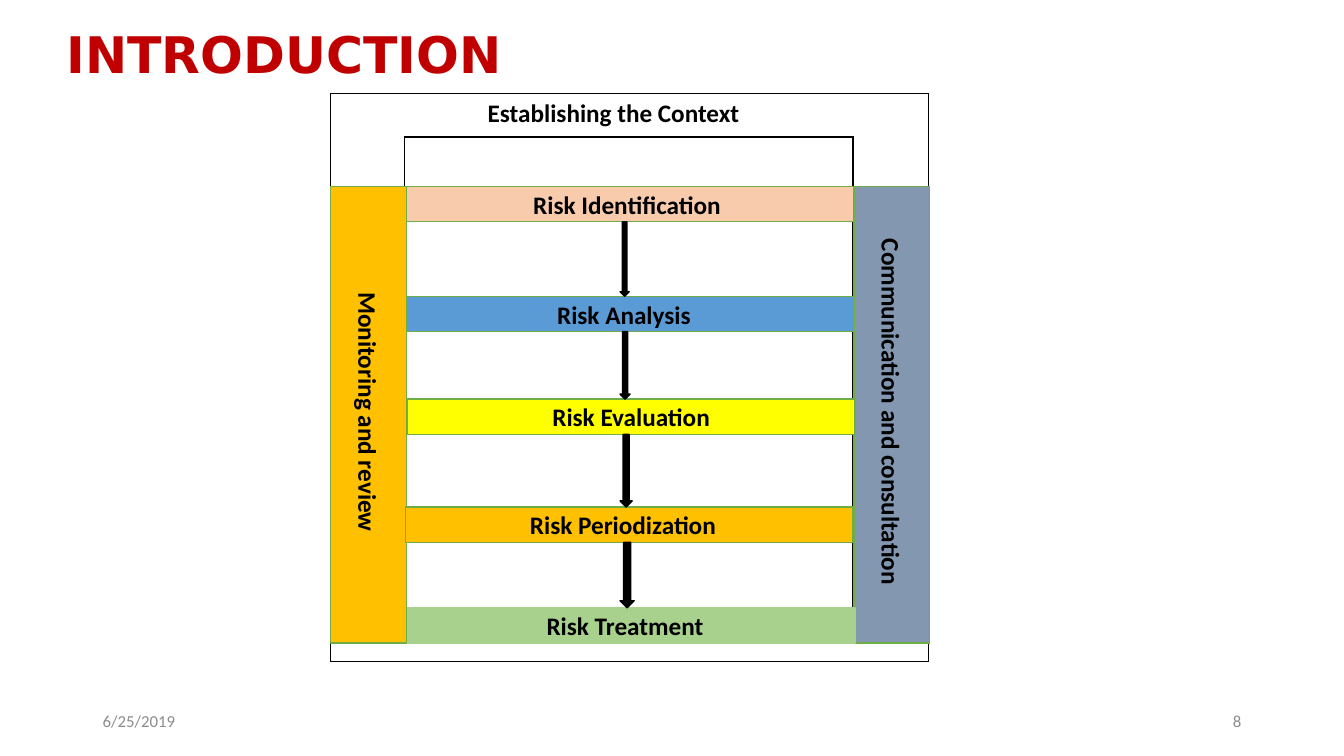
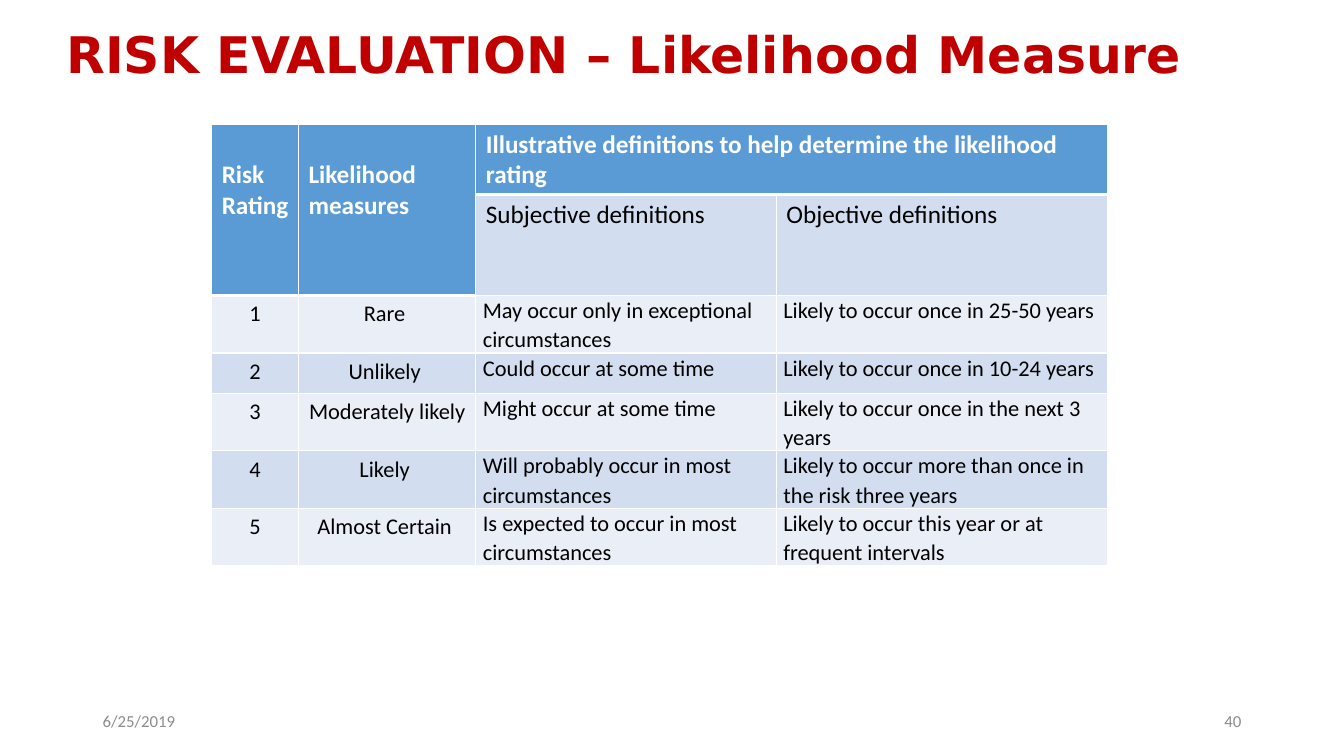
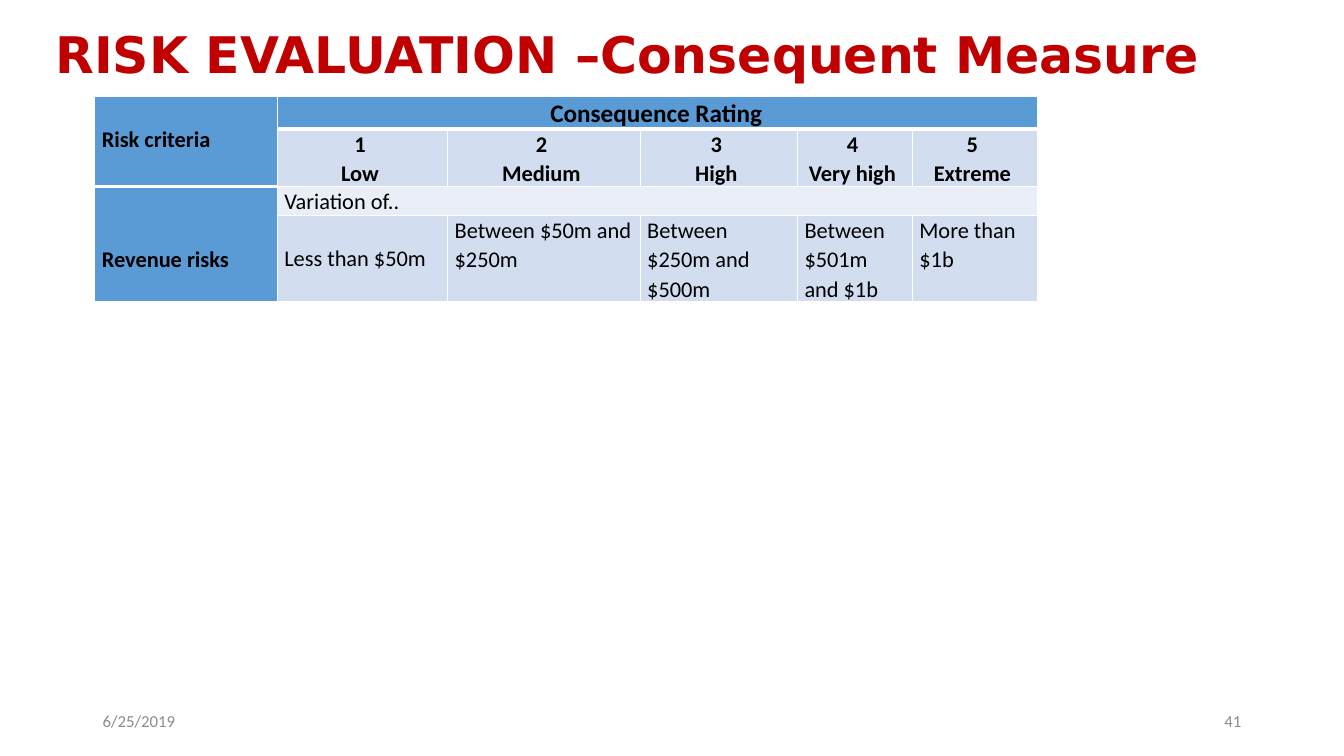
import pptx
import pptx.util
import pptx.dml.color
import pptx.enum.shapes
import pptx.enum.text
import pptx.oxml.ns
import lxml.etree

Inches = pptx.util.Inches
Pt = pptx.util.Pt
colour = pptx.dml.color.RGBColor.from_string
qn = pptx.oxml.ns.qn
Kind = pptx.enum.shapes.MSO_SHAPE
LEFT = pptx.enum.text.PP_ALIGN.LEFT
CENTER = pptx.enum.text.PP_ALIGN.CENTER
RIGHT = pptx.enum.text.PP_ALIGN.RIGHT
MIDDLE = pptx.enum.text.MSO_ANCHOR.MIDDLE
TOP = pptx.enum.text.MSO_ANCHOR.TOP

RED, BLACK, WHITE, GREY = "C00000", "000000", "FFFFFF", "8C8C8C"
BLUE, BAND, PALE, GREEN, AMBER = "5B9BD5", "D2DEEF", "EAEFF7", "70AD47", "FFC000"
ROOMY = (0.1, 0.05, 0.1, 0.05)
TIGHT = (0.07, 0, 0.07, 0)

styles = {
    "title": ("DejaVu Sans", 36, True, RED, LEFT, 1.0, ROOMY),
    "date": ("Calibri", 12, False, GREY, LEFT, 1.0, ROOMY),
    "number": ("Calibri", 12, False, GREY, RIGHT, 1.0, ROOMY),
    "step": ("Calibri", 18, True, BLACK, CENTER, 1.0, ROOMY),
    "context": ("Calibri", 18, True, BLACK, CENTER, 1.0, (0.1, 0.05, 0.42, 0.05)),
    "head": ("Calibri", 18, True, WHITE, LEFT, 1.0, (0.1, 0.05, 0.05, 0.05)),
    "subhead": ("Calibri", 18, False, BLACK, LEFT, 1.0, ROOMY),
    "rating": ("Calibri", 16, False, BLACK, CENTER, 1.0, ROOMY),
    "body": ("Calibri", 16, False, BLACK, LEFT, 1.07, TIGHT),
    "criteria": ("Calibri", 16, True, BLACK, LEFT, 1.07, TIGHT),
    "level": ("Calibri", 16, True, BLACK, CENTER, 1.07, (0.07, 0, 0.12, 0)),
    "banner": ("Calibri", 18, True, BLACK, CENTER, 1.07, (0.07, 0, 0.09, 0)),
}


def write(frame, owner, text, style, drop=0, nudge=0):
    name, size, bold, ink, align, spacing, (left, top, right, bottom) = styles[style]
    margins = {"margin_left": left, "margin_top": top + drop,
               "margin_right": right + nudge, "margin_bottom": bottom}
    for key, value in margins.items():
        setattr(owner, key, Inches(value))
    frame.word_wrap = True
    for index, line in enumerate(text.split("\n")):
        para = frame.add_paragraph() if index else frame.paragraphs[0]
        for key, value in {"alignment": align, "line_spacing": spacing}.items():
            setattr(para, key, value)
        span = para.add_run()
        span.text = line
        for key, value in {"name": name, "size": Pt(size), "bold": bold}.items():
            setattr(span.font, key, value)
        span.font.color.rgb = colour(ink)


def add_grid(page, left, top, widths, heights, edge, cells):
    table = page.shapes.add_table(len(heights), len(widths), Inches(left), Inches(top),
                                  Inches(sum(widths)), Inches(sum(heights))).table
    table.first_row = table.horz_banding = False
    for column, width in zip(table.columns, widths):
        column.width = Inches(width)
    for row, height in zip(table.rows, heights):
        row.height = Inches(height)
    for row, col, down, across, text, style, fill, drop in cells:
        for r in range(row, row + down):
            for c in range(col, col + across):
                cell = table.cell(r, c)
                properties = cell._tc.get_or_add_tcPr()
                for side in "LRTB":
                    weight = 3 if side == "B" and row == 0 and fill else 1
                    line = lxml.etree.SubElement(properties, qn("a:ln" + side), w=str(Pt(weight)))
                    solid = lxml.etree.SubElement(line, qn("a:solidFill"))
                    lxml.etree.SubElement(solid, qn("a:srgbClr"), val=edge)
                if fill:
                    cell.fill.solid()
                    cell.fill.fore_color.rgb = colour(fill)
                else:
                    cell.fill.background()
        origin = table.cell(row, col)
        if down * across > 1:
            origin.merge(table.cell(row + down - 1, col + across - 1))
        if text:
            write(origin.text_frame, origin, text, style, drop)


deck = pptx.Presentation()
deck.slide_width, deck.slide_height = Inches(13.33), Inches(7.5)

pages = []
for title, left, number in [
    ("INTRODUCTION", 0.56, "8"),
    ("RISK EVALUATION – Likelihood Measure", 0.56, "40"),
    ("RISK EVALUATION –Consequent Measure", 0.45, "41"),
]:
    page = deck.slides.add_slide(deck.slide_layouts[6])
    pages.append(page)
    for text, style, x, y, width, height, anchor in [
        (title, "title", left, 0.18, 12.19, 0.7, TOP),
        ("6/25/2019", "date", 0.92, 6.95, 3, 0.4, MIDDLE),
        (number, "number", 9.41, 6.95, 3, 0.4, MIDDLE),
    ]:
        box = page.shapes.add_textbox(Inches(x), Inches(y), Inches(width), Inches(height))
        box.text_frame.vertical_anchor = anchor
        write(box.text_frame, box.text_frame, text, style)

process, likelihood, consequence = pages

add_grid(process, 3.28, 0.93, [5.93], [5.63], BLACK,
         [(0, 0, 1, 1, "Establishing the Context", "context", None, 0)])
add_grid(process, 4.01, 1.36, [4.45], [4.95], BLACK,
         [(0, 0, 1, 1, "", "step", None, 0)])

step_height = 0.35
steps = [
    ("Risk Identification", 4.03, 1.85, "F8CBAD", GREEN, 0.06),
    ("Risk Analysis", 4.03, 2.94, BLUE, GREEN, 0.12),
    ("Risk Evaluation", 4.04, 3.96, "FFFF00", GREEN, 0),
    ("Risk Periodization", 4.02, 5.03, AMBER, GREEN, 0.12),
    ("Risk Treatment", 4.04, 6.03, "A9D18E", "A9D18E", 0.12),
]
blocks = [
    (Kind.RECTANGLE, "Monitoring and review ", 3.28, 1.85, 0.75, 4.53, AMBER, GREEN, 0),
    (Kind.RECTANGLE, "Communication and consultation ", 8.47, 1.85, 0.75, 4.53, "8497B0", GREEN, 0),
]
for text, left, top, fill, edge, nudge in steps:
    blocks.append((Kind.RECTANGLE, text, left, top, 4.44, step_height, fill, edge, nudge))
for step, following, width in zip(steps, steps[1:], [0.09, 0.1, 0.12, 0.14]):
    start = step[2] + step_height
    blocks.append((Kind.DOWN_ARROW, "", 6.15, start, width, following[2] - start, BLACK, BLACK, 0))

for kind, text, left, top, width, height, fill, edge, nudge in blocks:
    block = process.shapes.add_shape(kind, Inches(left), Inches(top), Inches(width), Inches(height))
    block.shadow.inherit = False
    block.fill.solid()
    block.fill.fore_color.rgb = colour(fill)
    block.line.color.rgb = colour(edge)
    block.line.width = Pt(1)
    if text:
        block.text_frame.vertical_anchor = MIDDLE
        write(block.text_frame, block.text_frame, text, "step", nudge=nudge)
    if text and height > width:
        block.element.find(".//" + qn("a:bodyPr")).set("vert", "vert")

likelihood_cells = [
    (0, 0, 2, 1, "Risk Rating", "head", BLUE, 0.3),
    (0, 1, 2, 1, "Likelihood measures", "head", BLUE, 0.3),
    (0, 2, 1, 2, "Illustrative definitions to help determine the likelihood\nrating", "head", BLUE, 0),
    (1, 2, 1, 1, "Subjective definitions", "subhead", BAND, 0),
    (1, 3, 1, 1, "Objective definitions", "subhead", BAND, 0),
]
ratings = [
    ("Rare ", "May occur only in exceptional circumstances", "Likely to occur once in 25-50 years"),
    ("Unlikely ", "Could occur at some time", "Likely to occur once in 10-24 years"),
    ("Moderately likely ", "Might occur at some time", "Likely to occur once in the next 3 years"),
    ("Likely ", "Will probably occur in most circumstances",
     "Likely to occur more than once in the risk three years"),
    ("Almost Certain ", "Is expected to occur in most circumstances",
     "Likely to occur this year or at frequent intervals"),
]
for rank, rating in enumerate(ratings, 1):
    for col, text in enumerate((str(rank),) + rating):
        style = "rating" if col < 2 else "body"
        likelihood_cells.append((rank + 1, col, 1, 1, text, style, PALE if rank % 2 else BAND, 0))
add_grid(likelihood, 2.1, 1.23, [0.86, 1.76, 2.98, 3.29],
         [0.69, 1, 0.57, 0.4, 0.57, 0.57, 0.57], WHITE, likelihood_cells)

consequence_cells = [
    (0, 0, 2, 1, "Risk criteria", "criteria", BLUE, 0.27),
    (0, 1, 1, 5, "Consequence Rating", "banner", BLUE, 0),
    (2, 0, 2, 1, "Revenue risks", "criteria", BLUE, 0.57),
    (2, 1, 1, 5, "Variation of..", "body", PALE, 0),
]
levels = [
    ("Low", "Less than $50m", 0.28),
    ("Medium", "Between $50m and $250m", 0),
    ("High", "Between $250m and $500m", 0),
    ("Very high", "Between $501m and $1b", 0),
    ("Extreme", "More than $1b", 0),
]
for rank, (level, amount, drop) in enumerate(levels, 1):
    consequence_cells.append((1, rank, 1, 1, f"{rank}\n{level}", "level", BAND, 0))
    consequence_cells.append((3, rank, 1, 1, amount, "body", BAND, drop))
add_grid(consequence, 0.94, 0.96, [1.81, 1.69, 1.91, 1.56, 1.14, 1.24],
         [0.31, 0.57, 0.28, 0.85], WHITE, consequence_cells)

deck.save("out.pptx")
